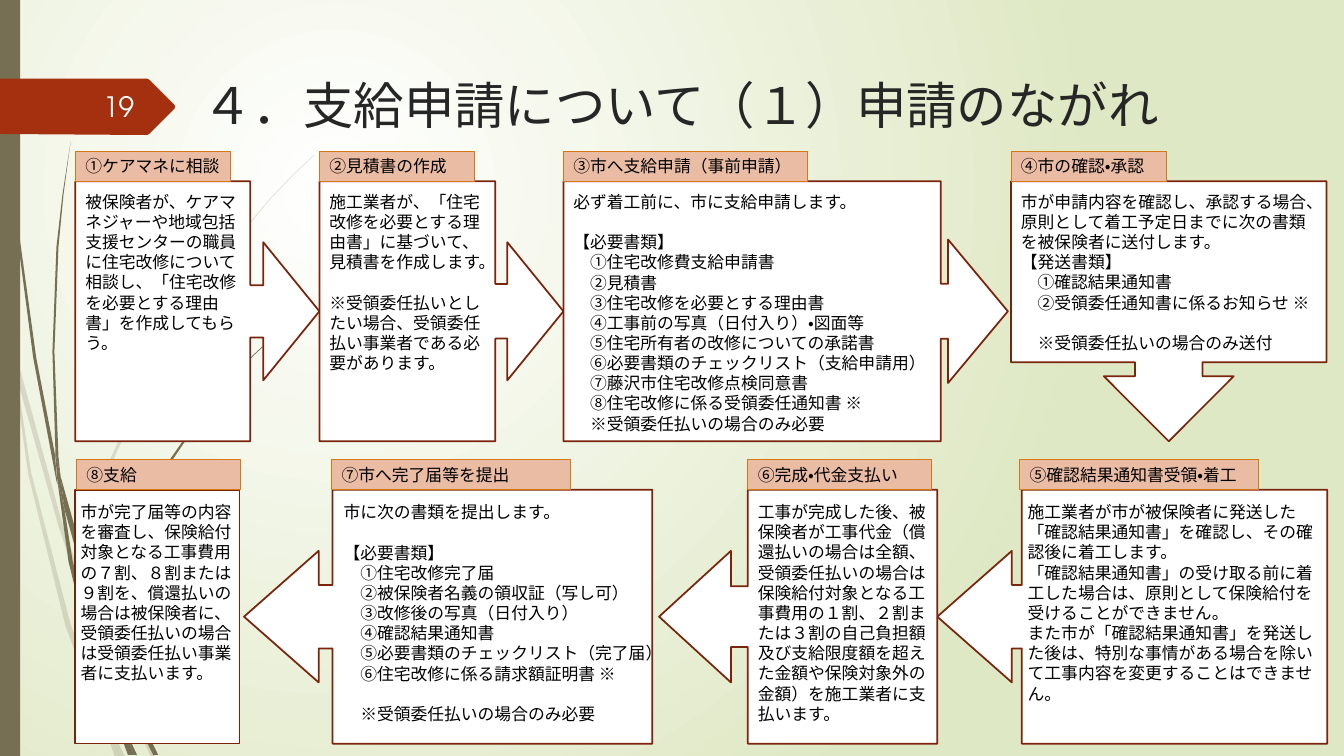
"""Build the slide on the flow of a home renovation benefit application."""
from dataclasses import dataclass
from typing import Any, NamedTuple

import lxml.etree
import pptx
import pptx.dml.color
import pptx.enum.lang
import pptx.enum.shapes
import pptx.enum.text
import pptx.oxml.ns
import pptx.shapes.autoshape
import pptx.slide
import pptx.text.text
import pptx.util

Cm, Pt, RGB = pptx.util.Cm, pptx.util.Pt, pptx.dml.color.RGBColor
Kind, Align = pptx.enum.shapes.MSO_SHAPE, pptx.enum.text.PP_ALIGN
Anchor, AutoSize = pptx.enum.text.MSO_ANCHOR, pptx.enum.text.MSO_AUTO_SIZE

WHITE, BLACK = RGB(0xFF, 0xFF, 0xFF), RGB(0, 0, 0)
PALE_GREEN = RGB(0xDF, 0xE8, 0xC4)
OLIVE, RUST = RGB(0x76, 0x6F, 0x54), RGB(0xA5, 0x30, 0x10)
TITLE_GREY, NUMBER_WHITE = RGB(0x26, 0x26, 0x26), RGB(0xFE, 0xFF, 0xFF)
PANEL_EDGE = RGB(0x7A, 0x24, 0x0C)
LABEL_FILL, LABEL_EDGE = RGB(0xEB, 0xBC, 0xA4), RGB(0xD4, 0x78, 0x17)

FONT = {"name": "TeX Gyre Adventor", "language_id": pptx.enum.lang.MSO_LANGUAGE_ID.JAPANESE}
FRAME = {"word_wrap": True, "vertical_anchor": Anchor.TOP, "auto_size": AutoSize.NONE}
LINE_PITCH, INSET = 0.514, 0.25
LABEL_HEIGHT = 0.76
INDENT = 0.42


class Line(NamedTuple):
    text: str
    indented: bool = False
    gap: bool = False


class Box(NamedTuple):
    left: float
    top: float
    width: float
    height: float


class Row(NamedTuple):
    panel_top: float
    panel_height: float
    body_top: float


class Span(NamedTuple):
    left: float
    width: float


@dataclass
class Step:
    row: Row
    kind: Kind
    adjustments: tuple[float, ...]
    panel: Span
    label: Span
    body: Span
    body_rows: int
    heading: str
    lines: list[Line]


def items(*texts: str) -> list[Line]:
    return [Line(text, indented=True) for text in texts]


UPPER, LOWER = Row(4.57, 6.55, 4.7), Row(12.34, 6.4, 12.52)
STEPS = [
    Step(UPPER, Kind.RIGHT_ARROW_CALLOUT, (0.214, 0.283, 0.23, 0.717),
         Span(1.9, 6.15), Span(1.9, 3.91), Span(1.9, 4.67), 8, "①ケアマネに相談",
         [Line("被保険者が、ケアマネジャーや地域包括支援センターの職員に住宅改修について相談し、「住宅改修を必要とする理由書」を作成してもらう。")]),
    Step(UPPER, Kind.RIGHT_ARROW_CALLOUT, (0.224, 0.283, 0.23, 0.721),
         Span(8.05, 6.15), Span(8.05, 3.91), Span(8.05, 4.67), 9, "②見積書の作成",
         [Line("施工業者が、「住宅改修を必要とする理由書」に基づいて、見積書を作成します。"),
          Line("※受領委任払いとしたい場合、受領委任払い事業者である必要があります。", gap=True)]),
    Step(UPPER, Kind.RIGHT_ARROW_CALLOUT, (0.211, 0.276, 0.23, 0.849),
         Span(14.2, 11.2), Span(14.2, 6.15), Span(14.2, 9.68), 12, "③市へ支給申請（事前申請）",
         [Line("必ず着工前に、市に支給申請します。"), Line("【必要書類】", gap=True),
          *items("①住宅改修費支給申請書", "②見積書", "③住宅改修を必要とする理由書",
                 "④工事前の写真（日付入り）・図面等", "⑤住宅所有者の改修についての承諾書",
                 "⑥必要書類のチェックリスト（支給申請用）", "⑦藤沢市住宅改修点検同意書",
                 "⑧住宅改修に係る受領委任通知書 ※", "※受領委任払いの場合のみ必要")]),
    Step(UPPER, Kind.DOWN_ARROW_CALLOUT, (0.26, 0.25, 0.25, 0.696),
         Span(25.48, 7.95), Span(25.48, 3.91), Span(25.48, 7.95), 8, "④市の確認・承認",
         [Line("市が申請内容を確認し、承認する場合、原則として着工予定日までに次の書類を被保険者に送付します。"),
          Line("【発送書類】"),
          *items("①確認結果通知書", "②受領委任通知書に係るお知らせ ※"),
          Line("※受領委任払いの場合のみ送付", indented=True, gap=True)]),
    Step(LOWER, Kind.LEFT_ARROW_CALLOUT, (0.25, 0.259, 0.294, 0.783),
         Span(23.62, 9.83), Span(25.7, 6.02), Span(25.65, 7.95), 10, "⑤確認結果通知書受領・着工",
         [Line("施工業者が市が被保険者に発送した「確認結果通知書」を確認し、その確認後に着工します。"),
          Line("「確認結果通知書」の受け取る前に着工した場合は、原則として保険給付を受けることができません。"),
          Line("また市が「確認結果通知書」を発送した後は、特別な事情がある場合を除いて工事内容を変更することはできません。")]),
    Step(LOWER, Kind.LEFT_ARROW_CALLOUT, (0.239, 0.259, 0.283, 0.681),
         Span(16.61, 7.01), Span(18.85, 4.62), Span(18.85, 4.78), 12, "⑥完成・代金支払い",
         [Line("工事が完成した後、被保険者が工事代金（償還払いの場合は全額、受領委任払いの場合は保険給付対象となる工事費用の１割、２割または３割の自己負担額及び支給限度額を超えた金額や保険対象外の金額）を施工業者に支払います。")]),
    Step(LOWER, Kind.LEFT_ARROW_CALLOUT, (0.25, 0.259, 0.294, 0.783),
         Span(6.15, 10.29), Span(8.36, 6.02), Span(8.41, 8.64), 12, "⑦市へ完了届等を提出",
         [Line("市に次の書類を提出します。"), Line("【必要書類】", gap=True),
          *items("①住宅改修完了届", "②被保険者名義の領収証（写し可）", "③改修後の写真（日付入り）",
                 "④確認結果通知書", "⑤必要書類のチェックリスト（完了届）",
                 "⑥住宅改修に係る請求額証明書 ※"),
          Line("※受領委任払いの場合のみ必要", indented=True, gap=True)]),
    Step(LOWER, Kind.RECTANGLE, (),
         Span(1.9, 4.14), Span(1.93, 4.14), Span(1.78, 4.67), 9, "⑧支給",
         [Line("市が完了届等の内容を審査し、保険給付対象となる工事費用の７割、８割または９割を、償還払いの場合は被保険者に、受領委任払いの場合は受領委任払い事業者に支払います。")]),
]

PALE_WISPS = [
    [(11, 350), (9, 322), (0, 282), (0, 299), (10, 344)],
    [(58, 522), (84, 599), (85, 586), (62, 520), (14, 345), (17, 376)],
    [(92, 607), (88, 596), (88, 610), (123, 694), (150, 751), (155, 751), (127, 692)],
    [(119, 751), (124, 751), (105, 711)],
    [(93, 683), (70, 619), (31, 469), (17, 376), (11, 350), (28, 470), (65, 621), (92, 693),
     (101, 714), (99, 707)],
    [(88, 584), (110, 462), (160, 349), (229, 245), (268, 198), (290, 175), (312, 154), (312, 153),
     (289, 175), (268, 197), (228, 244), (158, 348), (107, 461), (85, 584), (85, 586), (88, 596)],
    [(101, 714), (114, 751), (119, 751)],
    [(96, 692), (93, 683), (99, 707), (101, 714), (119, 751), (105, 711)],
]
DARK_WISPS = [
    [(7, 110), (17, 233), (33, 355), (56, 477), (57, 481), (55, 457), (55, 453), (36, 355),
     (19, 232), (8, 109), (5, 48), (4, 0), (3, 0), (4, 48)],
    [(88, 592), (106, 645), (106, 633), (106, 631), (93, 590), (60, 472), (64, 505)],
    [(113, 649), (110, 641), (111, 656), (132, 708), (152, 749), (157, 749), (136, 706)],
    [(110, 691), (98, 657), (72, 556), (64, 505), (57, 477), (68, 557), (93, 659), (111, 708),
     (117, 722), (116, 717)],
    [(60, 472), (58, 453), (54, 349), (58, 245), (63, 193), (70, 141), (62, 193), (56, 245),
     (52, 349), (55, 449)],
    [(133, 749), (136, 749), (122, 719)],
    [(57, 477), (64, 505), (60, 472), (55, 449), (55, 453)],
    [(111, 633), (125, 552), (158, 476), (205, 406), (231, 374), (245, 359), (261, 344), (260, 344),
     (245, 358), (231, 373), (204, 405), (156, 474), (122, 551), (106, 631), (110, 641)],
    [(117, 722), (127, 749), (131, 749)],
    [(116, 706), (110, 691), (116, 717), (117, 722), (130, 749), (133, 749), (122, 719)],
]
NUMBER_FLAG = [(0, 78), (146, 78), (148, 79), (173, 104), (174, 106), (173, 108), (148, 133),
               (146, 134), (0, 133)]


def apply_format(target: Any, values: dict[str, Any]) -> None:
    for name, value in values.items():
        setattr(target, name, value)


def write(frame: pptx.text.text.TextFrame, lines: list[Line], size: float, colour: RGB,
          align: Align = Align.LEFT, **frame_values: Any) -> None:
    apply_format(frame, FRAME | frame_values)
    for index, line in enumerate(lines):
        paragraph = frame.add_paragraph() if index else frame.paragraphs[0]
        apply_format(paragraph, {"alignment": align, "space_before": Pt(14.5 if line.gap else 0)})
        if line.indented:
            paragraph._p.get_or_add_pPr().set("marL", str(Cm(INDENT)))
        run = paragraph.add_run()
        run.text = line.text
        apply_format(run.font, FONT | {"size": Pt(size)})
        run.font.color.rgb = colour


def paint(shape: pptx.shapes.autoshape.Shape, fill: RGB, edge: RGB | None = None,
          weight: float = 0) -> None:
    shape.shadow.inherit = False
    shape.fill.solid()
    shape.fill.fore_color.rgb = fill
    if edge is None:
        shape.line.fill.background()
    else:
        shape.line.color.rgb = edge
        shape.line.width = Pt(weight)


def draw_outline(slide: pptx.slide.Slide, points: list[tuple[int, int]], fill: RGB,
                 opacity: int = 100) -> None:
    builder = slide.shapes.build_freeform(*points[0], scale=Cm(0.0254))
    builder.add_line_segments(points[1:], close=True)
    outline = builder.convert_to_shape()
    paint(outline, fill)
    if opacity < 100:
        colour = outline._element.xpath("./p:spPr/a:solidFill/a:srgbClr")[0]
        lxml.etree.SubElement(colour, pptx.oxml.ns.qn("a:alpha"), val=str(opacity * 1000))


def draw_background(slide: pptx.slide.Slide) -> None:
    fill = slide.background.fill
    fill.gradient()
    for stop, colour in zip(fill.gradient_stops, (WHITE, PALE_GREEN)):
        stop.color.rgb = colour
    gradient = slide._element.xpath(".//p:bg//a:gradFill")[0]
    for linear in gradient.xpath("./a:lin"):
        gradient.remove(linear)
    circle = lxml.etree.SubElement(gradient, pptx.oxml.ns.qn("a:path"), path="circle")
    lxml.etree.SubElement(circle, pptx.oxml.ns.qn("a:fillToRect"),
                          l="50000", t="50000", r="100000", b="100000")


def draw_step(slide: pptx.slide.Slide, step: Step) -> None:
    row = step.row
    panel_box = Box(step.panel.left, row.panel_top, step.panel.width, row.panel_height)
    panel = slide.shapes.add_shape(step.kind, *map(Cm, panel_box))
    for index, value in enumerate(step.adjustments):
        panel.adjustments[index] = value
    paint(panel, WHITE, PANEL_EDGE, 1.25)
    label_box = Box(step.label.left, row.panel_top - LABEL_HEIGHT, step.label.width, LABEL_HEIGHT)
    label = slide.shapes.add_shape(Kind.RECTANGLE, *map(Cm, label_box))
    paint(label, LABEL_FILL, LABEL_EDGE, 0.75)
    write(label.text_frame, [Line(step.heading)], 12, BLACK)
    body_box = Box(step.body.left, row.body_top, step.body.width,
                   step.body_rows * LINE_PITCH + INSET)
    body = slide.shapes.add_textbox(*map(Cm, body_box))
    write(body.text_frame, step.lines, 12, BLACK, auto_size=AutoSize.SHAPE_TO_FIT_TEXT)


def main() -> None:
    deck = pptx.Presentation()
    apply_format(deck, {"slide_width": Cm(33.87), "slide_height": Cm(19.05)})
    slide = deck.slides.add_slide(deck.slide_layouts[5])
    draw_background(slide)
    for wisps, opacity in ((PALE_WISPS, 20), (DARK_WISPS, 100)):
        for wisp in wisps:
            draw_outline(slide, wisp, OLIVE, opacity)
    paint(slide.shapes.add_shape(Kind.RECTANGLE, 0, 0, Cm(0.51), deck.slide_height), OLIVE)
    draw_outline(slide, NUMBER_FLAG, RUST)
    title = slide.shapes.title
    apply_format(title, dict(zip(("left", "top", "width", "height"), map(Cm, (4.85, 1.73, 26.54, 1.96)))))
    write(title.text_frame, [Line("４．支給申請について（１）申請のながれ")], 36, TITLE_GREY)
    number = slide.shapes.add_textbox(*map(Cm, Box(1.47, 2.18, 2.16, 1.02)))
    write(number.text_frame, [Line("19")], 20, NUMBER_WHITE, Align.RIGHT, vertical_anchor=Anchor.MIDDLE)
    for step in STEPS:
        draw_step(slide, step)
    deck.save("out.pptx")


if __name__ == "__main__":
    main()
